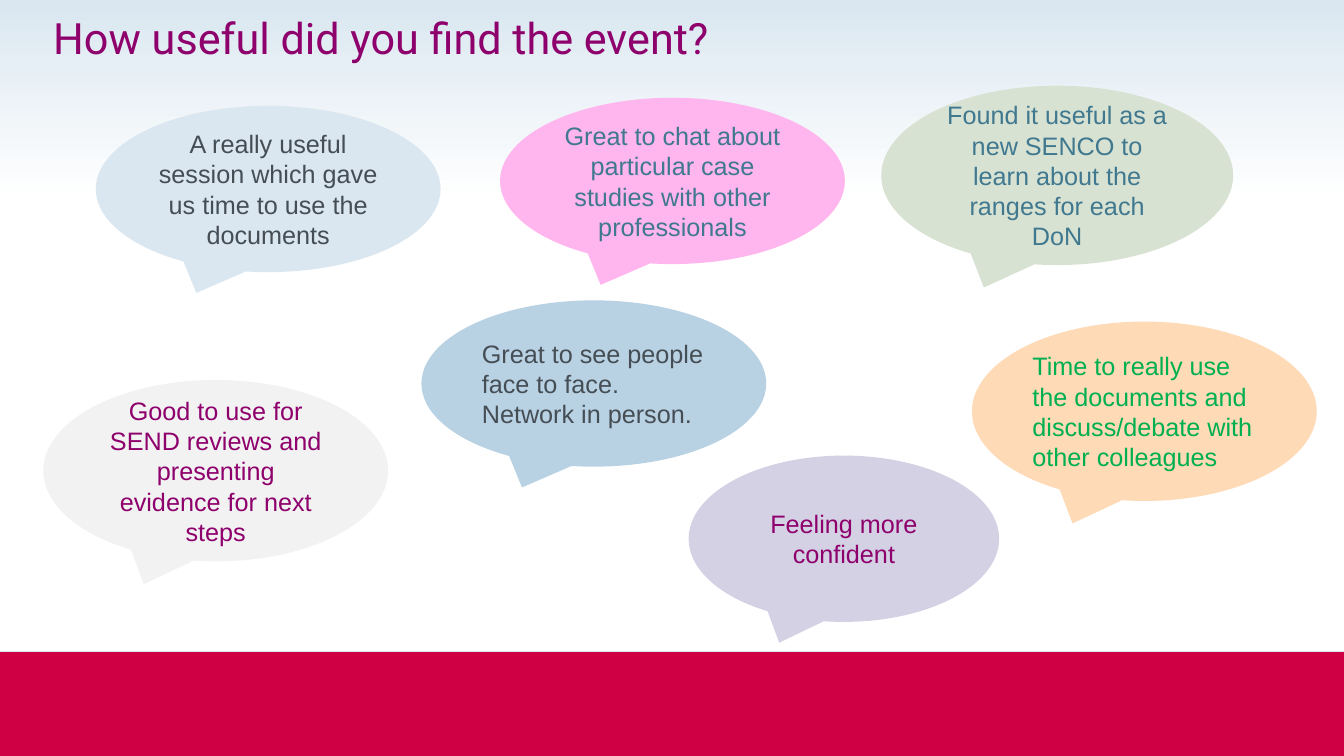
from pptx import Presentation
from pptx.dml.color import RGBColor
from pptx.enum.shapes import MSO_SHAPE as Shape
from pptx.enum.text import MSO_ANCHOR as Anchor, PP_ALIGN as Align
from pptx.util import Pt

PX = 9144  # EMU per px, 100 px to the inch
WIDTH, HEIGHT = 1333, 750
PALE_BLUE, CRIMSON, WHITE = "DAE7F0", "CF0044", "FFFFFF"
PLUM, SLATE, TEAL, GREEN = "8E006C", "454D55", "3F788F", "00B050"

# Box, fill, text colour, alignment, comment
COMMENTS = [
    ((95, 105, 342, 165), PALE_BLUE, SLATE, Align.CENTER,
     "A really useful session which gave us time to use the documents"),
    ((874, 85, 349, 178), "D8E2D2", TEAL, Align.CENTER,
     "Found it useful as a new SENCO to learn about the ranges for each DoN"),
    ((496, 97, 342, 165), "FFB5ED", TEAL, Align.CENTER,
     "Great to chat about particular case studies with other professionals"),
    ((43, 377, 342, 180), "F2F2F2", PLUM, Align.CENTER,
     "Good to use for SEND reviews and presenting evidence for next steps"),
    ((418, 298, 342, 165), "B9D2E3", SLATE, Align.LEFT,
     "Great to see people face to face. Network in person."),
    ((964, 319, 342, 178), "FEDAB6", GREEN, Align.LEFT,
     "Time to really use the documents and discuss/debate with other colleagues"),
    ((683, 452, 308, 165), "D3D1E3", PLUM, Align.CENTER,
     "Feeling more confident"),
]


def color(value):
    return RGBColor.from_string(value)


def emu(box):
    return [length * PX for length in box]


def add_filled(page, kind, box, fill):
    shape = page.shapes.add_shape(kind, *emu(box))
    shape.shadow.inherit = False
    shape.line.fill.background()
    shape.fill.solid()
    shape.fill.fore_color.rgb = color(fill)
    return shape


def write(frame, text, font, size, text_color, align):
    frame.word_wrap = True
    frame.text = text
    para = frame.paragraphs[0]
    para.alignment = align
    para.font.name, para.font.size = font, Pt(size)
    para.font.color.rgb = color(text_color)
    return para


def add_background(page, box):
    left, top, width, height = box
    # Sky fading downwards
    sky = add_filled(page, Shape.RECTANGLE, (left, top - 1, width, 201), WHITE)
    sky.fill.gradient()
    sky.fill.gradient_angle = 270
    for stop, position, value in zip(sky.fill.gradient_stops, (0, 1), (PALE_BLUE, WHITE)):
        stop.position = position
        stop.color.rgb = color(value)
    # Footer band, with a pale edge showing above it
    for band, fill in ((104, PALE_BLUE), (103, CRIMSON)):
        add_filled(page, Shape.RECTANGLE, (left, top + height - band, width, band), fill)


def add_title(page, box, text):
    frame = page.shapes.add_textbox(*emu(box)).text_frame
    para = write(frame, text, "Roboto", 30.8, PLUM, Align.LEFT)
    para.line_spacing = 0.7


def add_bubble(page, box, fill, text_color, align, text):
    bubble = add_filled(page, Shape.OVAL_CALLOUT, box, fill)
    bubble.text_frame.vertical_anchor = Anchor.MIDDLE
    write(bubble.text_frame, text, "Arial", 18, text_color, align)


def main():
    deck = Presentation()
    deck.slide_width, deck.slide_height = emu((WIDTH, HEIGHT))
    page = deck.slides.add_slide(deck.slide_layouts[6])
    add_background(page, (0, 0, WIDTH, HEIGHT))
    add_title(page, (43, 20, 700, 58), "How useful did you find the event?")
    for comment in COMMENTS:
        add_bubble(page, *comment)
    deck.save("out.pptx")


if __name__ == "__main__":
    main()
